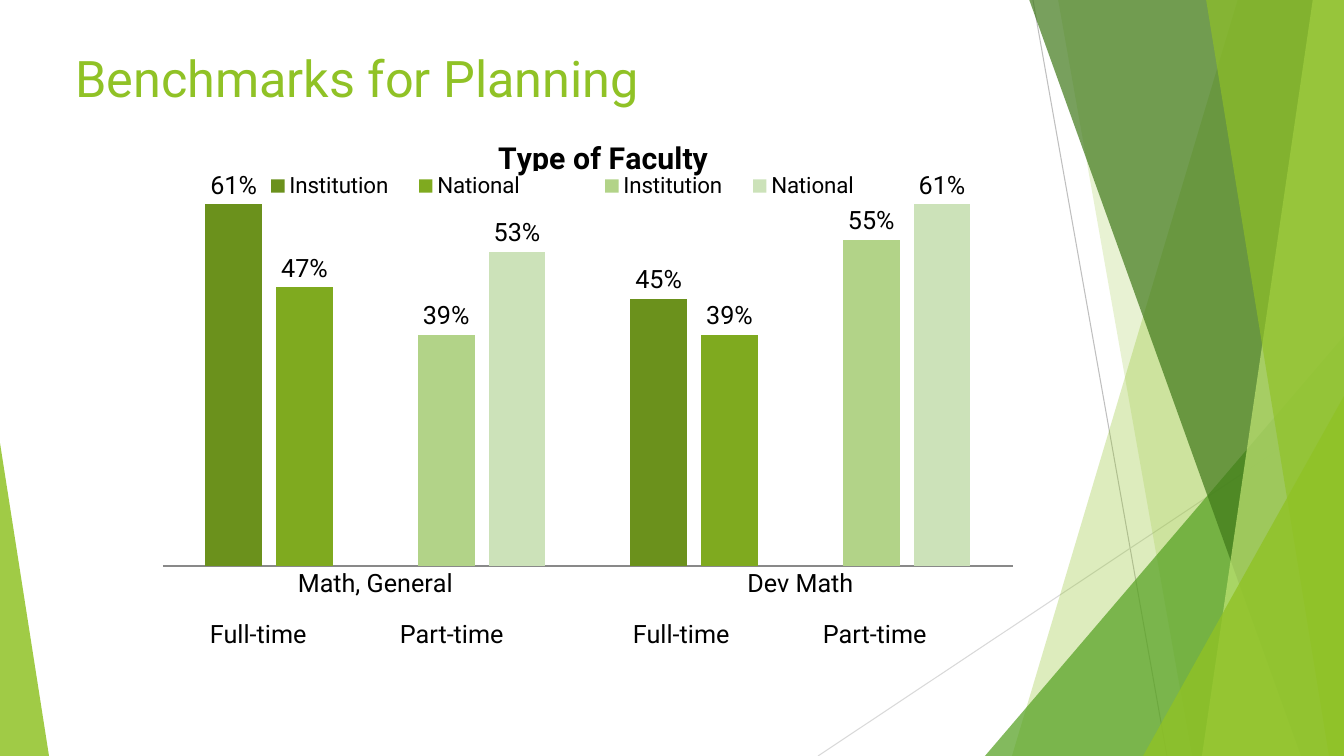
from lxml.etree import SubElement
from pptx import Presentation
from pptx.chart.data import CategoryChartData
from pptx.dml.color import RGBColor
from pptx.enum.chart import XL_CHART_TYPE, XL_LABEL_POSITION, XL_LEGEND_POSITION, XL_TICK_MARK
from pptx.enum.shapes import MSO_CONNECTOR, MSO_SHAPE
from pptx.enum.text import MSO_ANCHOR, PP_ALIGN
from pptx.oxml import parse_xml
from pptx.oxml.ns import nsdecls, qn
from pptx.util import Pt

PX = 914400 / 100.8
W, H = 1344, 756
FONT = "Roboto"

LIME = RGBColor(0x90, 0xC2, 0x26)
GREEN = RGBColor(0x54, 0xA0, 0x21)
FOREST = RGBColor(0x3F, 0x78, 0x19)
PALE_LIME = RGBColor(0xC0, 0xE4, 0x74)
OLIVE = RGBColor(0x6B, 0x91, 0x1C)
LEAF = RGBColor(0x7F, 0xAA, 0x1F)
SAGE = RGBColor(0xB2, 0xD3, 0x88)
MIST = RGBColor(0xCC, 0xE2, 0xB9)
GREY = RGBColor(0xBF, 0xBF, 0xBF)
LIGHT_GREY = RGBColor(0xD9, 0xD9, 0xD9)
AXIS_GREY = RGBColor(0x89, 0x89, 0x89)
BLACK = RGBColor(0, 0, 0)
WHITE = RGBColor(0xFF, 0xFF, 0xFF)

TITLE = "Benchmarks for Planning"
CHART_TITLE = "Type of Faculty"
CHART_BOX = (162, 122, 881, 571)
CATEGORIES = ["Math, General", "Dev Math"]
SERIES = [  # name, values, colour; the unnamed one parts the two pairs
    ("Institution", (0.61, 0.45), OLIVE),
    ("National", (0.47, 0.39), LEAF),
    (" ", (None, None), WHITE),
    ("Institution", (0.39, 0.55), SAGE),
    ("National", (0.53, 0.61), MIST),
]
FACULTY_TYPES = "Full-time\tPart-time"
FACULTY_LEFTS = [200, 623]
FACULTY_TAB = 190

RAYS = [  # start, end, colour
    ((1033, 0), (1167, H), GREY),
    ((W, 406), (818, H), LIGHT_GREY),
]
# Bands run from the top edge to the bottom edge: top x, bottom x, colour, opacity
BANDS = [
    (1238, 1012, LIME, 30),
    (1058, 1192, LIME, 20),
    (1029, 1301, FOREST, 70),
    (1313, 1202, PALE_LIME, 70),
    (1206, 1329, LIME, 65),
]
# Corner triangles: left, top, width, apex (0 left, 1 right), colour, opacity
BIG_CORNER = (985, 336, 359, 1, GREEN, 72)
SMALL_CORNERS = [
    (1143, 396, 201, 1, LIME, 80),
    (0, 443, 49, 0, LIME, 85),
]


def emu(*lengths):
    return [round(n * PX) for n in lengths]


def paint(sp, color, opacity=100):
    sp.shadow.inherit = False
    sp.fill.solid()
    sp.fill.fore_color.rgb = color
    sp.line.fill.background()
    if opacity < 100:
        clr = sp.fill._xPr.find(qn("a:solidFill"))[0]
        SubElement(clr, qn("a:alpha"), val=str(opacity * 1000))


def add_ray(shapes, start, end, color):
    cx = shapes.add_connector(MSO_CONNECTOR.STRAIGHT, *emu(*start, *end))
    cx.line.color.rgb = color
    cx.line.width = Pt(0.75)
    SubElement(cx._element.spPr, qn("a:effectLst"))


def add_band(shapes, top_x, bottom_x, color, opacity):
    fb = shapes.build_freeform(top_x, -1, scale=PX)
    fb.add_line_segments([(W, -1), (W, H), (bottom_x, H)], close=True)
    paint(fb.convert_to_shape(), color, opacity)


def add_corner(shapes, left, top, width, apex, color, opacity):
    sp = shapes.add_shape(MSO_SHAPE.ISOSCELES_TRIANGLE, *emu(left, top, width, H - top))
    sp.adjustments[0] = apex
    paint(sp, color, opacity)


def set_font(font, size, color=BLACK, bold=False):
    font.name, font.size, font.bold = FONT, Pt(size), bold
    font.color.rgb = color


def set_layout(parent, index, target="", **box):
    """Place a chart part by px within the chart; index is its slot in parent."""
    for old in parent.findall(qn("c:layout")):
        parent.remove(old)
    inner = f'<c:layoutTarget val="{target}"/>' if target else ""
    inner += '<c:xMode val="edge"/><c:yMode val="edge"/>'
    for key, length in box.items():
        whole = CHART_BOX[2] if key in "xw" else CHART_BOX[3]
        inner += f'<c:{key} val="{length / whole:.4f}"/>'
    parent.insert(index, parse_xml(
        f'<c:layout {nsdecls("c")}><c:manualLayout>{inner}</c:manualLayout></c:layout>'))


def add_faculty_chart(shapes):
    data = CategoryChartData(number_format="0%")
    data.categories = CATEGORIES
    for name, values, _ in SERIES:
        data.add_series(name, values)
    chart = shapes.add_chart(XL_CHART_TYPE.COLUMN_CLUSTERED, *emu(*CHART_BOX), data).chart
    set_font(chart.font, 18)

    chart.has_title = True
    p = chart.chart_title.text_frame.paragraphs[0]
    p.text = CHART_TITLE
    set_font(p.font, 21.6, bold=True)
    set_layout(chart.chart_title._element, 1, x=330, y=10)

    chart.has_legend = True
    legend = chart.legend
    legend.position = XL_LEGEND_POSITION.TOP
    legend.include_in_layout = True
    set_font(legend.font, 16)
    set_layout(legend._element, 1, x=85, y=47, w=630, h=34)
    set_layout(chart._chartSpace.chart.plotArea, 0, "inner", x=0, y=29, w=851, h=415)

    axis = chart.value_axis
    axis.minimum_scale, axis.maximum_scale = 0, 0.7
    axis.has_major_gridlines = False
    axis.visible = False
    axis = chart.category_axis
    axis.major_tick_mark = XL_TICK_MARK.NONE
    axis.format.line.color.rgb = AXIS_GREY
    axis.format.line.width = Pt(1.25)

    plot = chart.plots[0]
    plot.vary_by_categories = False
    plot.gap_width, plot.overlap = 150, -25
    for series, (_, _, color) in zip(plot.series, SERIES):
        series.format.fill.solid()
        series.format.fill.fore_color.rgb = color
        labels = series.data_labels
        labels.show_value = True
        labels.number_format, labels.number_format_is_linked = "0%", False
        labels.position = XL_LABEL_POSITION.OUTSIDE_END
        set_font(labels.font, 18)


def add_faculty_types(shapes, left):
    tf = shapes.add_textbox(*emu(left, 613, 360, 40)).text_frame
    tf.word_wrap = True
    p = tf.paragraphs[0]
    p.text = FACULTY_TYPES
    tabs = SubElement(p._p.get_or_add_pPr(), qn("a:tabLst"))
    SubElement(tabs, qn("a:tab"), pos=str(emu(FACULTY_TAB)[0]), algn="l")
    set_font(p.font, 18)


def main():
    prs = Presentation()
    prs.slide_width, prs.slide_height = emu(W, H)
    slide = prs.slides.add_slide(prs.slide_layouts[5])
    shapes = slide.shapes
    slide.background.fill.solid()
    slide.background.fill.fore_color.rgb = WHITE

    for ray in RAYS:
        add_ray(shapes, *ray)
    for band in BANDS[:2]:
        add_band(shapes, *band)
    add_corner(shapes, *BIG_CORNER)
    for band in BANDS[2:]:
        add_band(shapes, *band)
    for corner in SMALL_CORNERS:
        add_corner(shapes, *corner)

    title = shapes.title
    shapes._spTree.append(title._element)
    title.left, title.top, title.width, title.height = emu(65, 42, 948, 82)
    tf = title.text_frame
    tf.text = TITLE
    tf.vertical_anchor = MSO_ANCHOR.TOP
    p = tf.paragraphs[0]
    p.alignment = PP_ALIGN.LEFT
    set_font(p.font, 36, LIME)

    add_faculty_chart(shapes)
    for left in FACULTY_LEFTS:
        add_faculty_types(shapes, left)
    legend_gap = shapes.add_shape(MSO_SHAPE.RECTANGLE, *emu(534, 172, 43, 34))
    paint(legend_gap, WHITE)
    legend_gap.line.color.rgb = WHITE
    legend_gap.line.width = Pt(1.5)

    prs.save("out.pptx")


if __name__ == "__main__":
    main()
